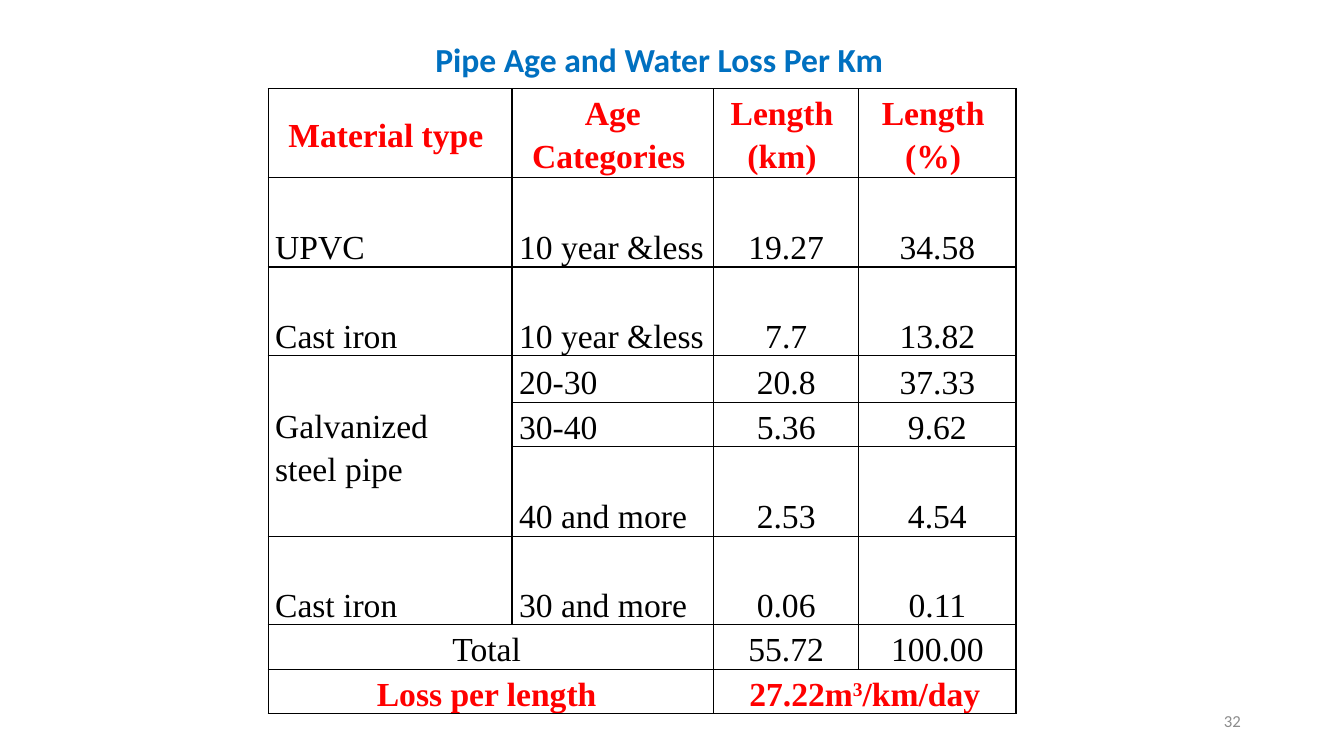
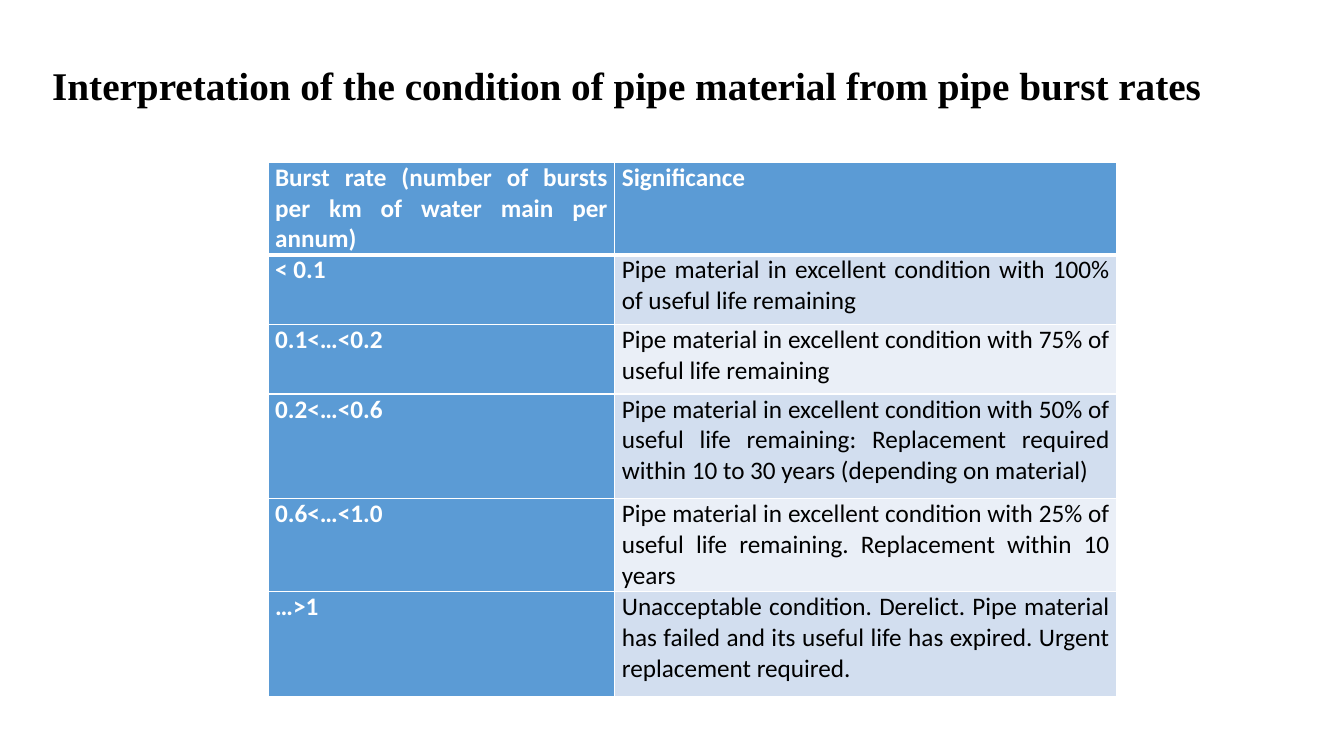
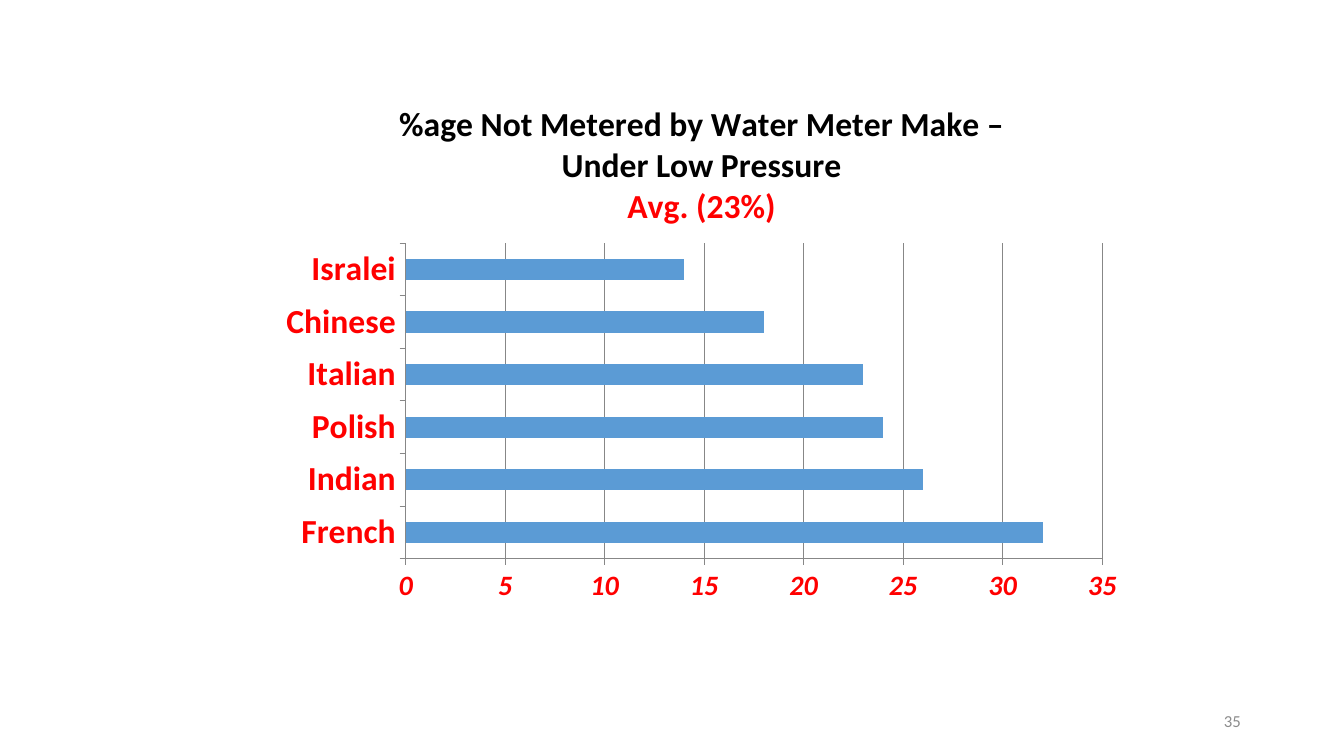
from dataclasses import dataclass, replace
from typing import Callable, Optional

from lxml.etree import SubElement
from pptx import Presentation
from pptx.chart.data import CategoryChartData
from pptx.dml.color import RGBColor
from pptx.enum.chart import XL_CHART_TYPE, XL_TICK_MARK
from pptx.enum.text import MSO_ANCHOR, PP_ALIGN
from pptx.oxml.ns import qn
from pptx.slide import Slide
from pptx.table import Table, _Cell
from pptx.text.text import Font, _Paragraph
from pptx.util import Emu, Pt

PX = 9144  # 100 px to the inch


@dataclass(frozen=True)
class Style:
    size: int
    color: str
    face: str = "Calibri"
    bold: bool = False
    slant: bool = False


@dataclass(frozen=True)
class Theme:
    black: str = "000000"
    white: str = "FFFFFF"
    blue: str = "5B9BD5"
    bands: tuple[str, str] = ("D2DEEF", "EAEFF7")
    rule: str = "878787"
    title: Style = Style(24, "0070C0", bold=True)
    head: Style = Style(28, "000000", "Times New Roman", bold=True)
    data: Style = Style(24, "000000", "Times New Roman")
    key: Style = Style(24, "FF0000", "Times New Roman", bold=True)
    note: Style = Style(18, "000000")
    label: Style = Style(18, "FFFFFF", bold=True)
    page: Style = Style(12, "8C8C8C")
    base: Style = Style(10, "000000")
    chart: Style = Style(24, "000000", bold=True)
    make: Style = Style(24, "FF0000", bold=True)
    scale: Style = Style(20, "FF0000", bold=True, slant=True)


@dataclass(frozen=True)
class Box:
    left: int
    top: int
    width: int
    height: int

    def emu(self) -> tuple[Emu, Emu, Emu, Emu]:
        return px(self.left), px(self.top), px(self.width), px(self.height)


@dataclass(frozen=True)
class Look:
    """How one table cell is drawn; edge is the line width below it."""
    style: Style
    align: PP_ALIGN
    anchor: MSO_ANCHOR
    line: str
    fill: Optional[str] = None
    space: Optional[float] = None
    edge: int = 1


THEME = Theme()
PAGE = Box(941, 695, 300, 40)

PIPES = [
    ("Material type ", "Age Categories ", "Length \n(km) ", "Length \n(%) "),
    ("UPVC", "10 year &less", "19.27", "34.58"),
    ("Cast iron", "10 year &less", "7.7", "13.82"),
    ("Galvanized \nsteel pipe", "20-30", "20.8", "37.33"),
    ("", "30-40", "5.36", "9.62"),
    ("", "40 and more", "2.53", "4.54"),
    ("Cast iron", "30 and more", "0.06", "0.11"),
    ("Total ", "", "55.72", "100.00"),
    ("Loss per length ", "", "27.22m", ""),
]
SPANS = [((3, 0), (5, 0)), ((7, 0), (7, 1)), ((8, 0), (8, 1)), ((8, 2), (8, 3))]

RATES = [
    ("Burst rate (number of bursts per km of water main per annum)", "Significance"),
    ("< 0.1", "Pipe material in excellent condition with 100% of useful life remaining"),
    ("0.1<…<0.2", "Pipe material in excellent condition with 75% of useful life remaining"),
    ("0.2<…<0.6", "Pipe material in excellent condition with 50% of useful life remaining: "
                  "Replacement required within 10 to 30 years (depending on material)"),
    ("0.6<…<1.0", "Pipe material in excellent condition with 25% of useful life remaining. "
                  "Replacement within 10 years"),
    ("…>1", "Unacceptable condition. Derelict. Pipe material has failed and its useful "
            "life has expired. Urgent replacement required."),
]

MAKES = {"French": 32, "Indian": 26, "Polish": 24,
         "Italian": 23, "Chinese": 18, "Isralei": 14}


def px(count: int) -> Emu:
    return Emu(count * PX)


def ink(font: Font, style: Style) -> None:
    font.name, font.size = style.face, Pt(style.size)
    font.bold, font.italic = style.bold, style.slant
    font.color.rgb = RGBColor.from_string(style.color)


def ink_runs(para: _Paragraph, style: Style) -> None:
    for run in para.runs:
        ink(run.font, style)


def add_text(slide: Slide, box: Box, text: str, style: Style,
             align: PP_ALIGN = PP_ALIGN.LEFT,
             anchor: MSO_ANCHOR = MSO_ANCHOR.TOP) -> None:
    frame = slide.shapes.add_textbox(*box.emu()).text_frame
    frame.word_wrap, frame.vertical_anchor = True, anchor
    para = frame.paragraphs[0]
    para.text, para.alignment = text, align
    ink_runs(para, style)


def add_page(slide: Slide, number: int) -> None:
    add_text(slide, PAGE, str(number), THEME.page, PP_ALIGN.RIGHT, MSO_ANCHOR.MIDDLE)


def add_edge(cell: _Cell, side: str, color: str, width: int) -> None:
    line = SubElement(cell._tc.get_or_add_tcPr(), qn(f"a:ln{side}"), w=str(Pt(width)))
    SubElement(SubElement(line, qn("a:solidFill")), qn("a:srgbClr"), val=color)


def draw_cell(cell: _Cell, text: str, look: Look) -> None:
    cell.margin_left = cell.margin_right = px(7)
    cell.margin_top = cell.margin_bottom = 0
    cell.vertical_anchor = look.anchor
    for side in "LRTB":
        add_edge(cell, side, look.line, look.edge if side == "B" else 1)
    if look.fill:
        cell.fill.solid()
        cell.fill.fore_color.rgb = RGBColor.from_string(look.fill)
    else:
        cell.fill.background()
    para = cell.text_frame.paragraphs[0]
    para.text, para.alignment, para.line_spacing = text, look.align, look.space
    ink_runs(para, look.style)


def add_grid(slide: Slide, left: int, top: int, cols: list[int], rows: list[int]) -> Table:
    box = Box(left, top, sum(cols), sum(rows))
    grid = slide.shapes.add_table(len(rows), len(cols), *box.emu()).table
    grid.first_row = grid.horz_banding = False
    for col, width in zip(grid.columns, cols):
        col.width = px(width)
    for row, height in zip(grid.rows, rows):
        row.height = px(height)
    return grid


def pipe_look(row: int, col: int) -> Look:
    last = len(PIPES) - 1
    style = THEME.key if row in (0, last) else THEME.data
    left = 0 < row < last - 1 and col < 2
    middle = row == 0 or (row, col) == (3, 0)
    return Look(style, PP_ALIGN.LEFT if left else PP_ALIGN.CENTER,
                MSO_ANCHOR.MIDDLE if middle else MSO_ANCHOR.BOTTOM,
                THEME.black, space=1.15)


def rate_look(row: int, col: int) -> Look:
    look = Look(THEME.label, PP_ALIGN.JUSTIFY, MSO_ANCHOR.TOP, THEME.white, THEME.blue)
    if row == 0:
        return replace(look, edge=3)
    if col == 0:
        return look
    return replace(look, style=THEME.note, fill=THEME.bands[(row - 1) % 2])


def fill_grid(grid: Table, data: list[tuple[str, ...]],
              look: Callable[[int, int], Look]) -> None:
    for r, row in enumerate(data):
        for c, text in enumerate(row):
            draw_cell(grid.cell(r, c), text, look(r, c))


def add_unit(para: _Paragraph) -> None:
    """Finish the loss figure with its raised 3."""
    for text in ("3", "/km/day"):
        para.add_run().text = text
    ink_runs(para, THEME.key)
    para.runs[1]._r.get_or_add_rPr().set("baseline", "30000")


def draw_pipes(slide: Slide) -> None:
    grid = add_grid(slide, 266, 88, [242, 200, 144, 156],
                    [88, 89, 88, 46, 44, 89, 88, 44, 44])
    fill_grid(grid, PIPES, pipe_look)
    add_unit(grid.cell(8, 2).text_frame.paragraphs[0])
    for start, end in SPANS:
        grid.cell(*start).merge(grid.cell(*end))
    add_text(slide, Box(358, 34, 592, 50), "Pipe Age and Water Loss Per Km",
             THEME.title, PP_ALIGN.CENTER)
    add_page(slide, 32)


def draw_rates(slide: Slide) -> None:
    grid = add_grid(slide, 266, 161, [344, 498], [92, 69, 69, 104, 92, 104])
    fill_grid(grid, RATES, rate_look)
    add_text(slide, Box(42, 56, 1276, 57),
             "Interpretation of the condition of pipe material from pipe burst rates",
             THEME.head)


def draw_makes(slide: Slide) -> None:
    data = CategoryChartData()
    data.categories = list(MAKES)
    data.add_series("Series 1", list(MAKES.values()))
    chart = slide.shapes.add_chart(XL_CHART_TYPE.BAR_CLUSTERED,
                                   *Box(267, 83, 858, 526).emu(), data).chart
    chart.has_legend = False
    ink(chart.font, THEME.base)

    chart.has_title = True
    title = chart.chart_title
    title.include_in_layout = False
    title.text_frame.text = ("%age Not Metered by Water Meter Make – Under Low Pressure\n"
                             "Avg. (23%)")
    for para, style in zip(title.text_frame.paragraphs, (THEME.chart, THEME.make)):
        ink_runs(para, style)

    plot = chart.plots[0]
    plot.gap_width, plot.vary_by_categories = 150, False
    bars = plot.series[0].format.fill
    bars.solid()
    bars.fore_color.rgb = RGBColor.from_string(THEME.blue)

    scale = chart.value_axis
    scale.minimum_scale, scale.maximum_scale, scale.major_unit = 0, 35, 5
    scale.has_major_gridlines = True
    for axis, style in ((chart.category_axis, THEME.make), (scale, THEME.scale)):
        axis.major_tick_mark = XL_TICK_MARK.OUTSIDE
        ink(axis.tick_labels.font, style)
    for part in (chart.category_axis, scale, scale.major_gridlines):
        part.format.line.color.rgb = RGBColor.from_string(THEME.rule)
        part.format.line.width = Pt(0.75)
    add_page(slide, 35)


def main() -> None:
    deck = Presentation()
    deck.slide_width, deck.slide_height = Emu(12192000), px(750)
    for draw in (draw_pipes, draw_rates, draw_makes):
        draw(deck.slides.add_slide(deck.slide_layouts[6]))
    deck.save("out.pptx")


if __name__ == "__main__":
    main()
